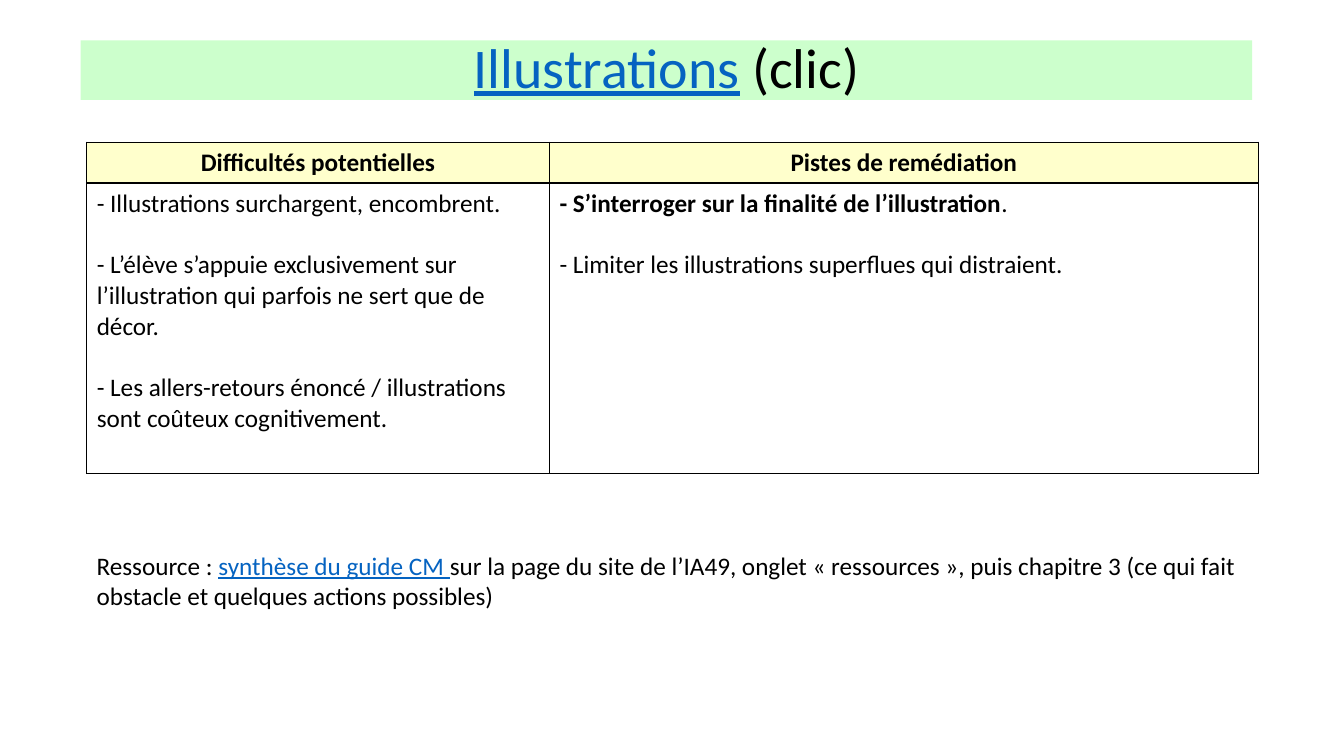
from dataclasses import dataclass

from lxml import etree
from pptx import Presentation
from pptx.dml.color import RGBColor
from pptx.enum.text import MSO_ANCHOR, MSO_AUTO_SIZE, PP_ALIGN
from pptx.oxml.ns import qn
from pptx.util import Inches, Pt

CENTER = PP_ALIGN.CENTER
LEFT = PP_ALIGN.LEFT
MIDDLE = MSO_ANCHOR.MIDDLE
TOP = MSO_ANCHOR.TOP
NO_AUTOFIT = MSO_AUTO_SIZE.NONE
GROW = MSO_AUTO_SIZE.SHAPE_TO_FIT_TEXT
TITLE_ONLY = 5


@dataclass(frozen=True)
class Theme:
    font: str = "Calibri"
    title_size: int = 40
    body_size: int = 18
    item_gap: int = 22
    border_width: int = 1
    text: str = "000000"
    link: str = "0563C1"
    title_fill: str = "CCFFCC"
    header_fill: str = "FFFFCC"
    body_fill: str = "FFFFFF"


THEME = Theme()
BOLD = {"bold": True}
LINK = {"underline": True, "color": THEME.link}

TITLE = [("Illustrations", LINK), (" (clic)", {})]
HEADERS = ["Difficultés potentielles", "Pistes de remédiation"]
DIFFICULTIES = [
    [("- Illustrations surchargent, encombrent.", {})],
    [("- L’élève s’appuie exclusivement sur l’illustration qui parfois ne sert que de décor.", {})],
    [("- Les allers-retours énoncé / illustrations sont coûteux cognitivement.", {})],
]
REMEDIES = [
    [("- S’interroger sur la finalité de l’illustration", BOLD), (".", {})],
    [("- Limiter les illustrations superflues qui distraient.", {})],
]
RESOURCE = [
    ("Ressource : ", {}),
    ("synthèse du guide CM ", LINK),
    ("sur la page du site de l’IA49, onglet « ressources », puis chapitre 3 "
     "(ce qui fait obstacle et quelques actions possibles)", {}),
]


def set_fill(target, color):
    target.fill.solid()
    target.fill.fore_color.rgb = RGBColor.from_string(color)


def add_spans(para, spans, size):
    for text, style in spans:
        span = para.add_run()
        span.text = text
        values = {"name": THEME.font, "size": Pt(size), "bold": False,
                  "underline": False, "color": THEME.text, **style}
        color = values.pop("color")
        for name, value in values.items():
            setattr(span.font, name, value)
        span.font.color.rgb = RGBColor.from_string(color)


def write_paragraphs(frame, paragraphs, size, align=LEFT):
    for index, spans in enumerate(paragraphs):
        para = frame.add_paragraph() if index else frame.paragraphs[0]
        para.alignment = align
        para.space_before = Pt(THEME.item_gap if index else 0)
        add_spans(para, spans, size)


def add_borders(cell):
    properties = cell._tc.get_or_add_tcPr()
    for index, side in enumerate(("lnL", "lnR", "lnT", "lnB")):
        line = etree.Element(qn(f"a:{side}"), w=str(Pt(THEME.border_width)))
        fill = etree.SubElement(line, qn("a:solidFill"))
        etree.SubElement(fill, qn("a:srgbClr"), val=THEME.text)
        properties.insert(index, line)


def format_title(page):
    box = page.shapes.title
    position = {"left": 0.8, "top": 0.4, "width": 11.62, "height": 0.59}
    for name, value in position.items():
        setattr(box, name, Inches(value))
    set_fill(box, THEME.title_fill)
    frame = box.text_frame
    frame.auto_size = NO_AUTOFIT
    frame.vertical_anchor = MIDDLE
    write_paragraphs(frame, [TITLE], THEME.title_size, CENTER)
    frame.paragraphs[0].line_spacing = 0.9


def fill_cell(cell, paragraphs, color, align, anchor):
    set_fill(cell, color)
    add_borders(cell)
    cell.vertical_anchor = anchor
    write_paragraphs(cell.text_frame, paragraphs, THEME.body_size, align)


def add_remediation_table(page):
    table = page.shapes.add_table(
        2, 2, Inches(0.86), Inches(1.41), Inches(11.62), Inches(3.28)).table
    for column, width in zip(table.columns, (4.59, 7.03)):
        column.width = Inches(width)
    for row, height in zip(table.rows, (0.4, 2.88)):
        row.height = Inches(height)
    for index, (header, items) in enumerate(zip(HEADERS, (DIFFICULTIES, REMEDIES))):
        fill_cell(table.cell(0, index), [[(header, BOLD)]], THEME.header_fill, CENTER, MIDDLE)
        fill_cell(table.cell(1, index), items, THEME.body_fill, LEFT, TOP)


def add_resource_note(page):
    box = page.shapes.add_textbox(Inches(0.86), Inches(5.41), Inches(11.62), Inches(0.71))
    frame = box.text_frame
    frame.word_wrap = True
    frame.auto_size = GROW
    write_paragraphs(frame, [RESOURCE], THEME.body_size)


def main():
    deck = Presentation()
    deck.slide_width = Inches(13.33)
    deck.slide_height = Inches(7.5)
    page = deck.slides.add_slide(deck.slide_layouts[TITLE_ONLY])
    format_title(page)
    add_remediation_table(page)
    add_resource_note(page)
    deck.save("out.pptx")


if __name__ == "__main__":
    main()
